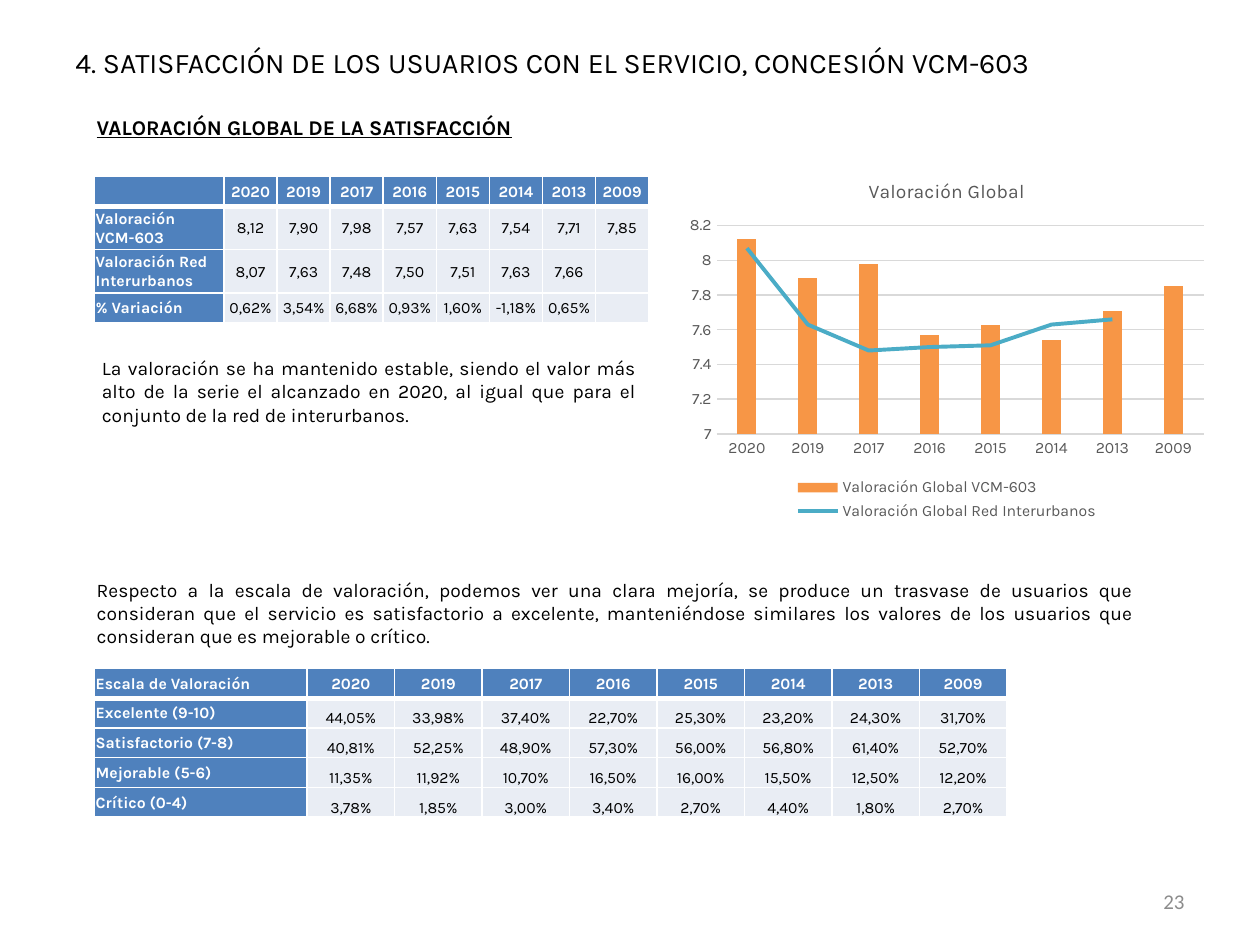
from lxml.etree import SubElement
from pptx import Presentation
from pptx.chart.data import CategoryChartData as ChartData
from pptx.dml.color import RGBColor as Rgb
from pptx.enum.chart import XL_CHART_TYPE as ChartType, XL_LEGEND_POSITION as LegendAt
from pptx.enum.chart import XL_MARKER_STYLE as Marker, XL_TICK_MARK as Tick
from pptx.enum.text import MSO_ANCHOR as Anchor, PP_ALIGN as Align
from pptx.oxml import parse_xml
from pptx.oxml.ns import nsdecls, qn
from pptx.util import Pt

COLORS = {
    "ink": "000000", "white": "FFFFFF", "header": "4F81BD", "body": "E9EDF4",
    "bars": "F79646", "line": "4BACC6", "label": "595959", "grid": "D9D9D9",
    "number": "8C8C8C",
}
YEARS = ["2020", "2019", "2017", "2016", "2015", "2014", "2013", "2009"]
RATINGS = [
    ["", *YEARS],
    ["Valoración VCM-603", "8,12", "7,90", "7,98", "7,57", "7,63", "7,54", "7,71", "7,85"],
    ["Valoración Red Interurbanos", "8,07", "7,63", "7,48", "7,50", "7,51", "7,63", "7,66", ""],
    ["% Variación", "0,62%", "3,54%", "6,68%", "0,93%", "1,60%", "-1,18%", "0,65%", ""],
]
SCALE = [
    ["Escala de Valoración", *YEARS],
    ["Excelente (9-10)", "44,05%", "33,98%", "37,40%", "22,70%", "25,30%", "23,20%", "24,30%", "31,70%"],
    ["Satisfactorio (7-8)", "40,81%", "52,25%", "48,90%", "57,30%", "56,00%", "56,80%", "61,40%", "52,70%"],
    ["Mejorable (5-6)", "11,35%", "11,92%", "10,70%", "16,50%", "16,00%", "15,50%", "12,50%", "12,20%"],
    ["Crítico (0-4)", "3,78%", "1,85%", "3,00%", "3,40%", "2,70%", "4,40%", "1,80%", "2,70%"],
]


def rgb(name):
    return Rgb.from_string(COLORS[name])


def style_font(font, size, color, face="Karla", bold=False, underline=False):
    font.size, font.name, font.bold, font.underline = Pt(size), face, bold, underline
    font.color.rgb = rgb(color)


def write(frame, text, size=11, color="ink", align=Align.LEFT, **font_format):
    paragraph = frame.paragraphs[0]
    paragraph.alignment = align
    if text:
        run = paragraph.add_run()
        run.text = text
        style_font(run.font, size, color, **font_format)
    else:
        SubElement(paragraph._p, qn("a:endParaRPr"), sz=str(size * 100))


def border(cell, side, width):
    edge = SubElement(cell._tc.get_or_add_tcPr(), qn(f"a:ln{side}"), w=str(Pt(width)))
    fill = SubElement(edge, qn("a:solidFill"))
    SubElement(fill, qn("a:srgbClr"), val=COLORS["white"])


def numbers(cells):
    return [float(cell.replace(",", ".")) if cell else None for cell in cells]


class SlideBuilder:
    def __init__(self, slide, face="Karla", table_size=9, label_color="label"):
        self.slide = slide
        self.face = face
        self.table_size = table_size
        self.label_color = label_color

    def text(self, left, top, width, height, content, anchor=Anchor.TOP, **text_format):
        box = self.slide.shapes.add_textbox(Pt(left), Pt(top), Pt(width), Pt(height))
        box.text_frame.word_wrap = True
        box.text_frame.vertical_anchor = anchor
        write(box.text_frame, content, **{"face": self.face, **text_format})

    def table(self, left, top, rows, label_width, year_width, heights, value_anchor):
        widths = [label_width] + [year_width] * len(YEARS)
        grid = self.slide.shapes.add_table(
            len(rows), len(widths), Pt(left), Pt(top), Pt(sum(widths)), Pt(sum(heights))).table
        for column, width in zip(grid.columns, widths):
            column.width = Pt(width)
        for r, (row, height) in enumerate(zip(rows, heights)):
            grid.rows[r].height = Pt(height)
            for c, content in enumerate(row):
                self.cell(grid.cell(r, c), content, r == 0, c == 0, r == 1, value_anchor)

    def cell(self, cell, content, is_head, is_label, under_head, value_anchor):
        strong = is_head or is_label
        cell.margin_left = cell.margin_right = cell.margin_top = Pt(0.7)
        cell.margin_bottom = 0
        cell.vertical_anchor = Anchor.MIDDLE if strong else value_anchor
        for side, width in {"L": 1, "R": 1, "T": 3 if under_head else 1, "B": 3 if is_head else 1}.items():
            border(cell, side, width)
        cell.fill.solid()
        cell.fill.fore_color.rgb = rgb("header" if strong else "body")
        write(cell.text_frame, content, self.table_size, "white" if strong else "ink",
              Align.LEFT if is_label else Align.CENTER, face=self.face, bold=strong)

    def combo_chart(self, left, top, width, height, title, bars, line):
        data = ChartData(number_format="General")
        data.categories = YEARS
        for name, values in (bars, line):
            data.add_series(name, values)
        chart = self.slide.shapes.add_chart(
            ChartType.COLUMN_CLUSTERED, Pt(left), Pt(top), Pt(width), Pt(height), data).chart
        style_font(chart.font, 10, "ink", self.face)
        write(chart.chart_title.text_frame, title, 11, self.label_color, Align.CENTER, face=self.face)
        chart.has_legend = True
        chart.legend.position = LegendAt.BOTTOM
        chart.legend.include_in_layout = False
        style_font(chart.legend.font, 9, self.label_color, self.face)
        self.axes(chart)
        self.split_line(chart)
        self.place_plot(chart, x=0.07, y=0.18, w=0.91, h=0.57)

    def axes(self, chart):
        years, score = chart.category_axis, chart.value_axis
        for axis in (years, score):
            axis.major_tick_mark = axis.minor_tick_mark = Tick.NONE
            style_font(axis.tick_labels.font, 9, self.label_color, self.face)
        score.minimum_scale, score.maximum_scale, score.major_unit = 7, 8.2, 0.2
        score.tick_labels.number_format = "General"
        score.tick_labels.number_format_is_linked = False
        score.format.line.fill.background()
        for rule in (years.format.line, score.major_gridlines.format.line):
            rule.color.rgb, rule.width = rgb("grid"), Pt(0.75)

    def split_line(self, chart):
        columns = chart.plots[0]
        columns.gap_width, columns.vary_by_categories = 219, False
        columns.series[0].format.fill.solid()
        columns.series[0].format.fill.fore_color.rgb = rgb("bars")
        bar_xml = columns._element
        network = columns.series[1]._element
        for bar_only in network.findall(qn("c:invertIfNegative")):
            network.remove(bar_only)
        line_xml = parse_xml(f'<c:lineChart {nsdecls("c")}><c:grouping val="standard"/>'
                             '<c:varyColors val="0"/></c:lineChart>')
        line_xml.append(network)
        SubElement(line_xml, qn("c:marker"), val="1")
        for axis_id in bar_xml.findall(qn("c:axId")):
            SubElement(line_xml, qn("c:axId"), val=axis_id.get("val"))
        bar_xml.addnext(line_xml)
        trend = chart.plots[1].series[0]
        trend.smooth = False
        trend.marker.style = Marker.NONE
        trend.format.line.color.rgb, trend.format.line.width = rgb("line"), Pt(2.25)

    def place_plot(self, chart, **bounds):
        plot_area = chart._chartSpace.chart.plotArea
        for old in plot_area.findall(qn("c:layout")):
            plot_area.remove(old)
        layout = parse_xml(f'<c:layout {nsdecls("c")}><c:manualLayout><c:layoutTarget val="inner"/>'
                           '<c:xMode val="edge"/><c:yMode val="edge"/></c:manualLayout></c:layout>')
        for key, share in bounds.items():
            SubElement(layout[0], qn(f"c:{key}"), val=str(share))
        plot_area.insert(0, layout)


def main():
    deck = Presentation()
    deck.slide_width, deck.slide_height = Pt(720), Pt(540)
    page = SlideBuilder(deck.slides.add_slide(deck.slide_layouts[6]))
    page.text(36, 21.6, 641.5, 27.4,
              "4. SATISFACCIÓN DE LOS USUARIOS CON EL SERVICIO, CONCESIÓN VCM-603",
              Anchor.MIDDLE, size=16.2)
    page.text(48.2, 62, 607, 21.6, "VALORACIÓN GLOBAL DE LA SATISFACCIÓN",
              size=12, align=Align.JUSTIFY, bold=True, underline=True)
    page.text(48.2, 326.9, 607, 47.5,
              "Respecto a la escala de valoración, podemos ver una clara mejoría, se produce un "
              "trasvase de usuarios que consideran que el servicio es satisfactorio a excelente, "
              "manteniéndose similares los valores de los usuarios que consideran que es mejorable "
              "o crítico.", align=Align.JUSTIFY)
    page.text(51.1, 200.2, 319.7, 47.5,
              "La valoración se ha mantenido estable, siendo el valor más alto de la serie el "
              "alcanzado en 2020, al igual que para el conjunto de la red de interurbanos.",
              align=Align.JUSTIFY)
    page.table(54, 100.8, RATINGS, 74, 30.35, [17.2, 24.7, 24.7, 17.2], Anchor.MIDDLE)
    page.combo_chart(388, 91.4, 306, 208.8, "Valoración Global",
                     ("Valoración Global VCM-603", numbers(RATINGS[1][1:])),
                     ("Valoración Global Red Interurbanos", numbers(RATINGS[2][1:])))
    page.table(54, 382, SCALE, 121.5, 50, [17] * len(SCALE), Anchor.BOTTOM)
    page.text(516.2, 500.4, 167.8, 28.8, "23", Anchor.MIDDLE,
              size=12, color="number", align=Align.RIGHT, face="Calibri")
    deck.save("out.pptx")


if __name__ == "__main__":
    main()
